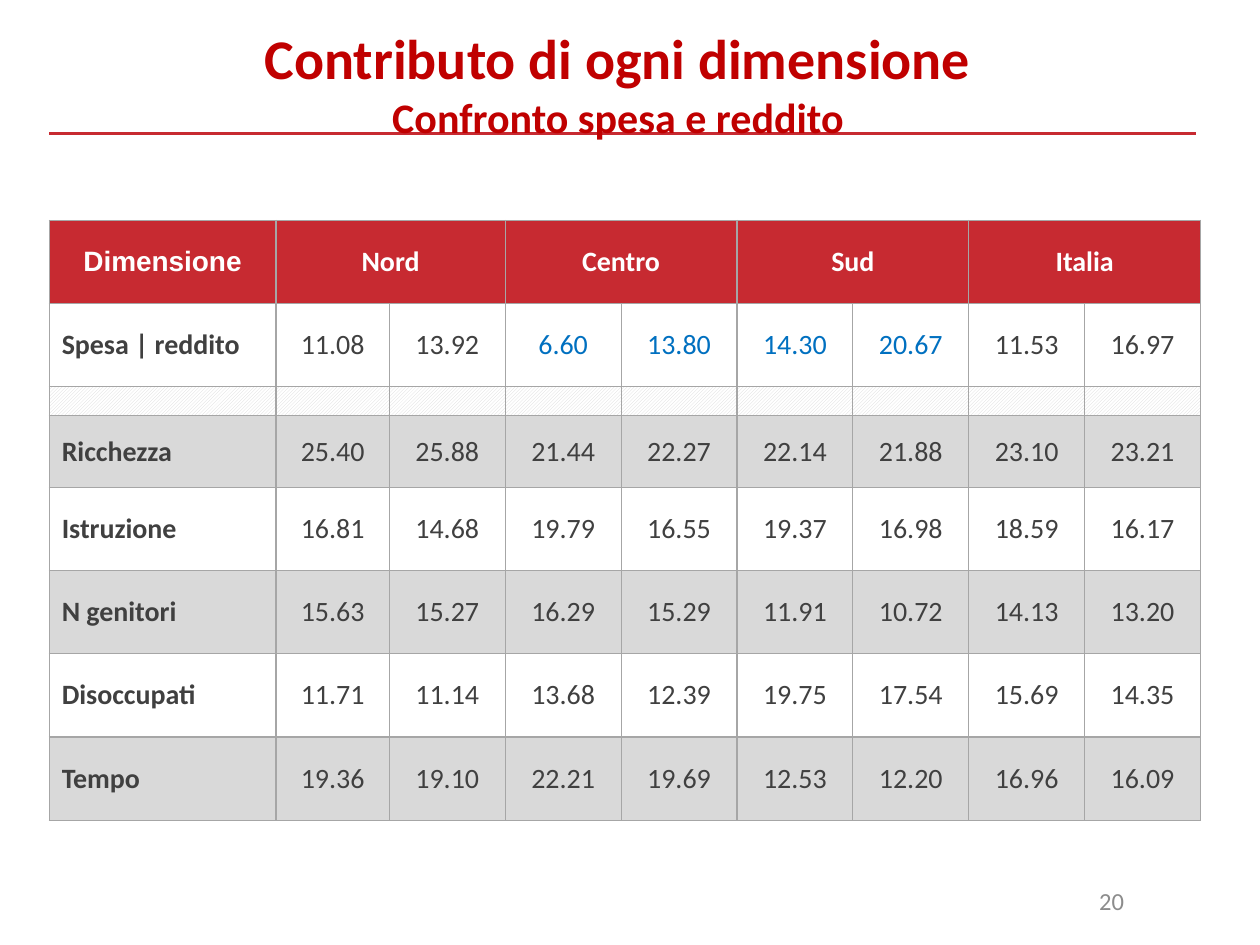
from dataclasses import dataclass

from lxml import etree
from pptx import Presentation
from pptx.dml.color import RGBColor
from pptx.enum.dml import MSO_PATTERN
from pptx.enum.shapes import MSO_CONNECTOR
from pptx.enum.text import MSO_ANCHOR, PP_ALIGN
from pptx.oxml.ns import qn
from pptx.util import Inches, Pt

LEFT, MID, RIGHT = PP_ALIGN.LEFT, PP_ALIGN.CENTER, PP_ALIGN.RIGHT
CENTRE = MSO_ANCHOR.MIDDLE
HATCH = MSO_PATTERN.LIGHT_UPWARD_DIAGONAL
STRAIGHT = MSO_CONNECTOR.STRAIGHT


@dataclass(frozen=True)
class Theme:
    face: str = "Calibri"
    alt: str = "Arial"
    title: str = "C00000"
    red: str = "C72A31"
    ink: str = "404040"
    blue: str = "0070C0"
    band: str = "D9D9D9"
    grid: str = "A6A6A6"
    pale: str = "8C8C8C"
    white: str = "FFFFFF"
    head_pt: int = 32
    sub_pt: int = 24
    body_pt: int = 16
    page_pt: int = 14
    gap_pt: int = 6


@dataclass(frozen=True)
class Row:
    name: str
    vals: str
    high: float = 0.66
    fill: str = "FFFFFF"
    marks: tuple[int, ...] = ()


T = Theme()
EDGE, WIDE = 0.39, 9.1
COLS = [1.8, 0.9] + [0.92] * 7
HEAD = ["Nord", "Centro", "Sud", "Italia"]
HEAD_HIGH, GAP_HIGH, GAP_ROW = 0.66, 0.23, 2
ROWS = [
    Row("Spesa | reddito", "11.08 13.92 6.60 13.80 14.30 20.67 11.53 16.97",
        marks=(3, 4, 5, 6)),
    Row("Ricchezza", "25.40 25.88 21.44 22.27 22.14 21.88 23.10 23.21",
        high=0.57, fill=T.band),
    Row("Istruzione", "16.81 14.68 19.79 16.55 19.37 16.98 18.59 16.17"),
    Row("N genitori", "15.63 15.27 16.29 15.29 11.91 10.72 14.13 13.20",
        fill=T.band),
    Row("Disoccupati", "11.71 11.14 13.68 12.39 19.75 17.54 15.69 14.35"),
    Row("Tempo", "19.36 19.10 22.21 19.69 12.53 12.20 16.96 16.09",
        fill=T.band),
]


def rgb(code: str) -> RGBColor:
    return RGBColor.from_string(code)


def style(para, text: str, size: int, tint: str, align=MID,
          bold: bool = False, face: str = T.face) -> None:
    para.text = text
    para.alignment = align
    font = para.font
    font.name, font.size, font.bold = face, Pt(size), bold
    font.color.rgb = rgb(tint)


def add_box(slide, x: float, y: float, w: float, h: float):
    box = slide.shapes.add_textbox(*map(Inches, (x, y, w, h)))
    box.text_frame.word_wrap = True
    return box.text_frame


def add_rule(slide, y: float) -> None:
    line = slide.shapes.add_connector(
        STRAIGHT, *map(Inches, (EDGE + WIDE, y, EDGE, y)))
    line.line.color.rgb = rgb(T.red)
    line.line.width = Pt(2)
    etree.SubElement(line._element.spPr, qn("a:effectLst"))


def add_edges(cell) -> None:
    """Draw the thin grid line on all four sides of a cell."""
    props = cell._tc.get_or_add_tcPr()
    for side in ("lnL", "lnR", "lnT", "lnB"):
        line = etree.SubElement(props, qn(f"a:{side}"), w=str(Pt(0.75)))
        fill = etree.SubElement(line, qn("a:solidFill"))
        etree.SubElement(fill, qn("a:srgbClr"), val=T.grid)


def fill_cell(cell, text: str, fill: str, tint: str, **look) -> None:
    cell.fill.solid()
    cell.fill.fore_color.rgb = rgb(fill)
    cell.vertical_anchor = CENTRE
    style(cell.text_frame.paragraphs[0], text, T.body_pt, tint, **look)


def hatch_cell(cell) -> None:
    cell.fill.patterned()
    cell.fill.pattern = HATCH
    cell.fill.fore_color.rgb = rgb(T.band)
    cell.fill.back_color.rgb = rgb(T.white)
    para = cell.text_frame.paragraphs[0]
    etree.SubElement(para._p, qn("a:endParaRPr"), sz=str(T.gap_pt * 100))


def add_grid(slide, y: float) -> None:
    highs = [HEAD_HIGH] + [row.high for row in ROWS]
    highs.insert(GAP_ROW, GAP_HIGH)
    table = slide.shapes.add_table(
        len(highs), len(COLS),
        *map(Inches, (EDGE, y, WIDE, sum(highs)))).table
    table.first_row = table.horz_banding = False
    for col, wide in zip(table.columns, COLS):
        col.width = Inches(wide)
    for row, high in zip(table.rows, highs):
        row.height = Inches(high)
    for cell in table.iter_cells():
        add_edges(cell)

    fill_cell(table.cell(0, 0), "Dimensione", T.red, T.white,
              bold=True, face=T.alt)
    for i, name in enumerate(HEAD):
        c = 1 + 2 * i
        table.cell(0, c).merge(table.cell(0, c + 1))
        fill_cell(table.cell(0, c), name, T.red, T.white, bold=True)
    for c in range(len(COLS)):
        hatch_cell(table.cell(GAP_ROW, c))
    for i, row in enumerate(ROWS, 1):
        r = i if i < GAP_ROW else i + 1
        fill_cell(table.cell(r, 0), row.name, row.fill, T.ink,
                  align=LEFT, bold=True)
        for c, val in enumerate(row.vals.split(), 1):
            tint = T.blue if c in row.marks else T.ink
            fill_cell(table.cell(r, c), val, row.fill, tint)


def main() -> None:
    deck = Presentation()
    deck.slide_width, deck.slide_height = Inches(10), Inches(7.5)
    slide = deck.slides.add_slide(deck.slide_layouts[6])
    add_rule(slide, 1.06)

    page = add_box(slide, 6.02, 6.95, 3, 0.4)
    page.vertical_anchor = CENTRE
    style(page.paragraphs[0], "20", T.page_pt, T.pale, align=RIGHT)

    title = add_box(slide, EDGE, 0.19, 9.03, 1.13)
    title.margin_left = title.margin_right = 0
    title.margin_top = title.margin_bottom = 0
    style(title.paragraphs[0], "Contributo di ogni dimensione",
          T.head_pt, T.title, bold=True)
    style(title.add_paragraph(), "Confronto spesa e reddito",
          T.sub_pt, T.title, bold=True)

    add_grid(slide, 1.75)
    deck.save("out.pptx")


if __name__ == "__main__":
    main()
